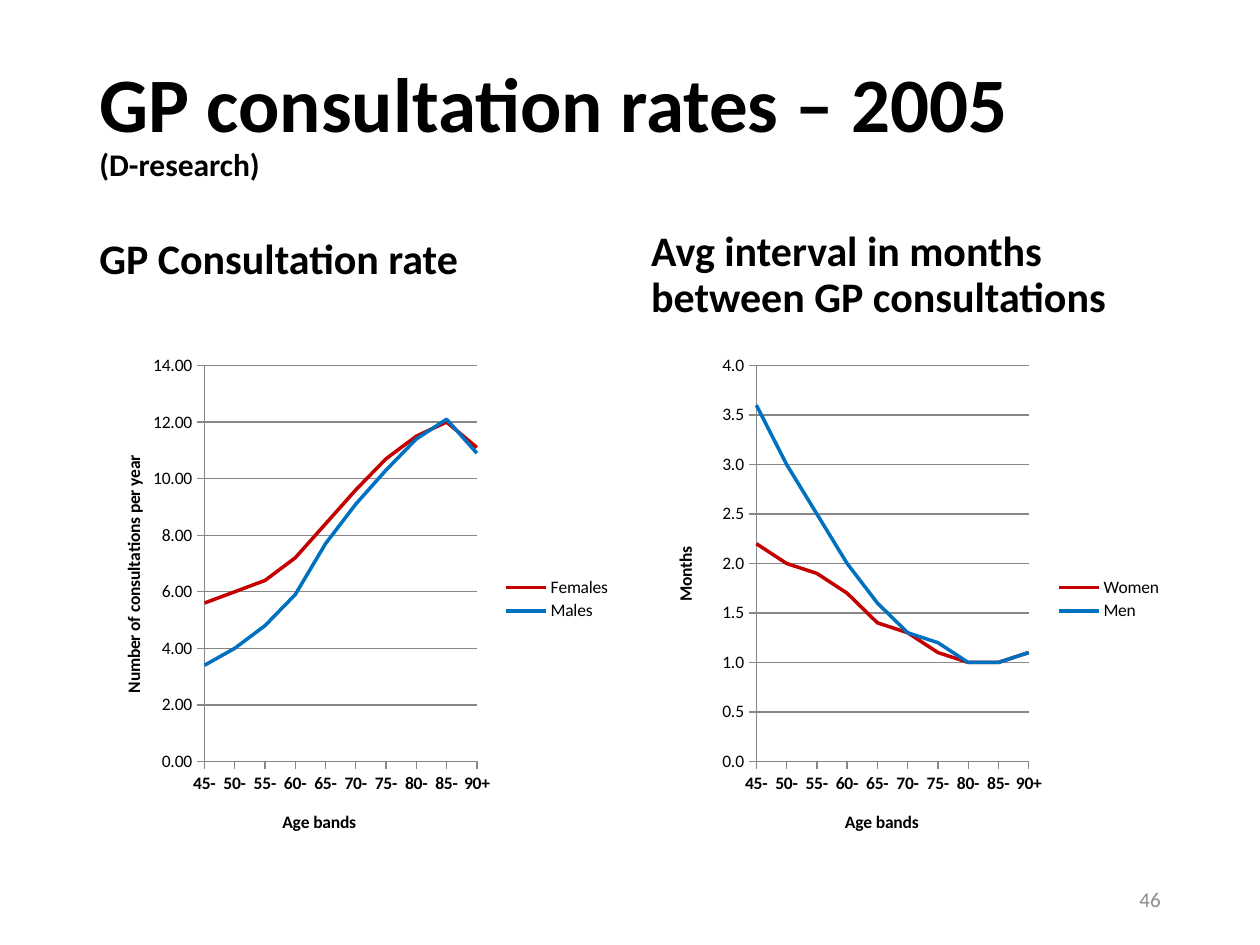
from lxml import etree
from pptx import Presentation, util as u
from pptx.chart.data import CategoryChartData
from pptx.dml.color import RGBColor
from pptx.enum import chart as c, text as t
from pptx.oxml.ns import qn

COLORS = {"text": "000000", "women": "C40000", "men": "0070C0",
          "grid": "878787", "number": "8C8C8C"}
FONT = "Calibri"
LEFT, RIGHT, COLUMN = 0.69, 5.07, 4.24
CHART_TOP, CHART_HEIGHT = 2.74, 4.03

presentation = Presentation()
presentation.slide_width, presentation.slide_height = u.Inches(10), u.Inches(7.5)
slide = presentation.slides.add_slide(presentation.slide_layouts[6])


def add_text(box, runs, anchor, color="text", bold=True, align=t.PP_ALIGN.LEFT, before=0):
    """Add one paragraph of (text, size) runs, with a line break between runs."""
    frame = slide.shapes.add_textbox(*map(u.Inches, box)).text_frame
    frame.word_wrap, frame.vertical_anchor = True, anchor
    paragraph = frame.paragraphs[0]
    paragraph.alignment, paragraph.line_spacing = align, 0.9
    paragraph.space_before = u.Pt(before)
    for index, (words, size) in enumerate(runs):
        if index:
            paragraph.add_line_break()
        run = paragraph.add_run()
        run.text = words
        run.font.name, run.font.size, run.font.bold = FONT, u.Pt(size), bold
        run.font.color.rgb = RGBColor.from_string(COLORS[color])


def place(parent, index, **shares):
    """Fix a chart part at shares of the chart's size."""
    for old in parent.findall(qn("c:layout")):
        parent.remove(old)
    layout = etree.Element(qn("c:layout"))
    manual = etree.SubElement(layout, qn("c:manualLayout"))
    if parent.tag == qn("c:plotArea"):
        etree.SubElement(manual, qn("c:layoutTarget")).set("val", "inner")
    for mode in ("xMode", "yMode"):
        etree.SubElement(manual, qn("c:" + mode)).set("val", "edge")
    for name, share in shares.items():
        etree.SubElement(manual, qn("c:" + name)).set("val", str(share))
    parent.insert(index, layout)


# Title and column headings
add_text((LEFT, 0.4, 8.62, 1.18),
         [("GP consultation rates – 2005", 44), ("(D-research)", 18)], t.MSO_ANCHOR.MIDDLE)
add_text((LEFT, 1.84, COLUMN, 0.9), [("GP Consultation rate", 24)],
         t.MSO_ANCHOR.TOP, before=2)
add_text((RIGHT, 1.7, COLUMN, 0.9),
         [("Avg interval in months between GP consultations", 24)],
         t.MSO_ANCHOR.BOTTOM, before=10)

# Line charts, one per column
age_bands = [f"{age}-" for age in range(45, 90, 5)] + ["90+"]
charts = [
    dict(left=LEFT, title="Number of consultations per year", title_y=0.21, age_x=0.36,
         top=14, step=2, format="0.00", series={
             "Females": [5.6, 6, 6.4, 7.2, 8.4, 9.6, 10.7, 11.5, 12, 11.1],
             "Males": [3.4, 4, 4.8, 5.9, 7.7, 9.1, 10.3, 11.4, 12.1, 10.9]}),
    dict(left=RIGHT, title="Months", title_y=0.39, age_x=0.38,
         top=4, step=0.5, format="0.0", series={
             "Women": [2.2, 2, 1.9, 1.7, 1.4, 1.3, 1.1, 1, 1, 1.1],
             "Men": [3.6, 3, 2.5, 2, 1.6, 1.3, 1.2, 1, 1, 1.1]}),
]
for item in charts:
    data = CategoryChartData()
    data.categories = age_bands
    for name, values in item["series"].items():
        data.add_series(name, values)
    box = map(u.Inches, (item["left"], CHART_TOP, COLUMN, CHART_HEIGHT))
    chart = slide.shapes.add_chart(c.XL_CHART_TYPE.LINE, *box, data).chart
    chart.has_title = False
    chart.font.name, chart.font.size = FONT, u.Pt(10)
    chart.font.color.rgb = RGBColor.from_string(COLORS["text"])
    place(chart.plots[0]._element.getparent(), 0, x=0.22, y=0.04, w=0.51, h=0.78)

    # Series
    for series, color in zip(chart.plots[0].series, ("women", "men")):
        series.smooth = False
        series.marker.style = c.XL_MARKER_STYLE.NONE
        series.format.line.width = u.Pt(2)
        series.format.line.color.rgb = RGBColor.from_string(COLORS[color])

    # Axes, with the lines starting on the value axis
    ages, rates = chart.category_axis, chart.value_axis
    rates.minimum_scale, rates.maximum_scale = 0, item["top"]
    rates.major_unit = item["step"]
    rates.has_major_gridlines = True
    rates.tick_labels.number_format = item["format"]
    rates.tick_labels.number_format_is_linked = False
    crossing = etree.Element(qn("c:crossBetween"), val="midCat")
    rates._element.find(qn("c:majorUnit")).addprevious(crossing)
    ages.tick_labels.font.bold = True
    for axis, words, x, y in ((ages, "Age bands", item["age_x"], 0.91),
                              (rates, item["title"], 0.06, item["title_y"])):
        axis.major_tick_mark = c.XL_TICK_MARK.OUTSIDE
        run = axis.axis_title.text_frame.paragraphs[0].add_run()
        run.text = words
        run.font.name, run.font.size, run.font.bold = FONT, u.Pt(10), True
        run.font.color.rgb = RGBColor.from_string(COLORS["text"])
        place(axis.axis_title._element, 1, x=x, y=y)
    for line in (ages.format.line, rates.format.line, rates.major_gridlines.format.line):
        line.width = u.Pt(0.75)
        line.color.rgb = RGBColor.from_string(COLORS["grid"])

    # Legend
    chart.has_legend = True
    chart.legend.position = c.XL_LEGEND_POSITION.RIGHT
    chart.legend.include_in_layout = False
    place(chart.legend._element, 1, x=0.77, y=0.45, w=0.22, h=0.1)

# Slide number
add_text((7.06, 6.95, 2.25, 0.4), [("46", 12)], t.MSO_ANCHOR.MIDDLE,
         color="number", bold=False, align=t.PP_ALIGN.RIGHT)

presentation.save("out.pptx")
